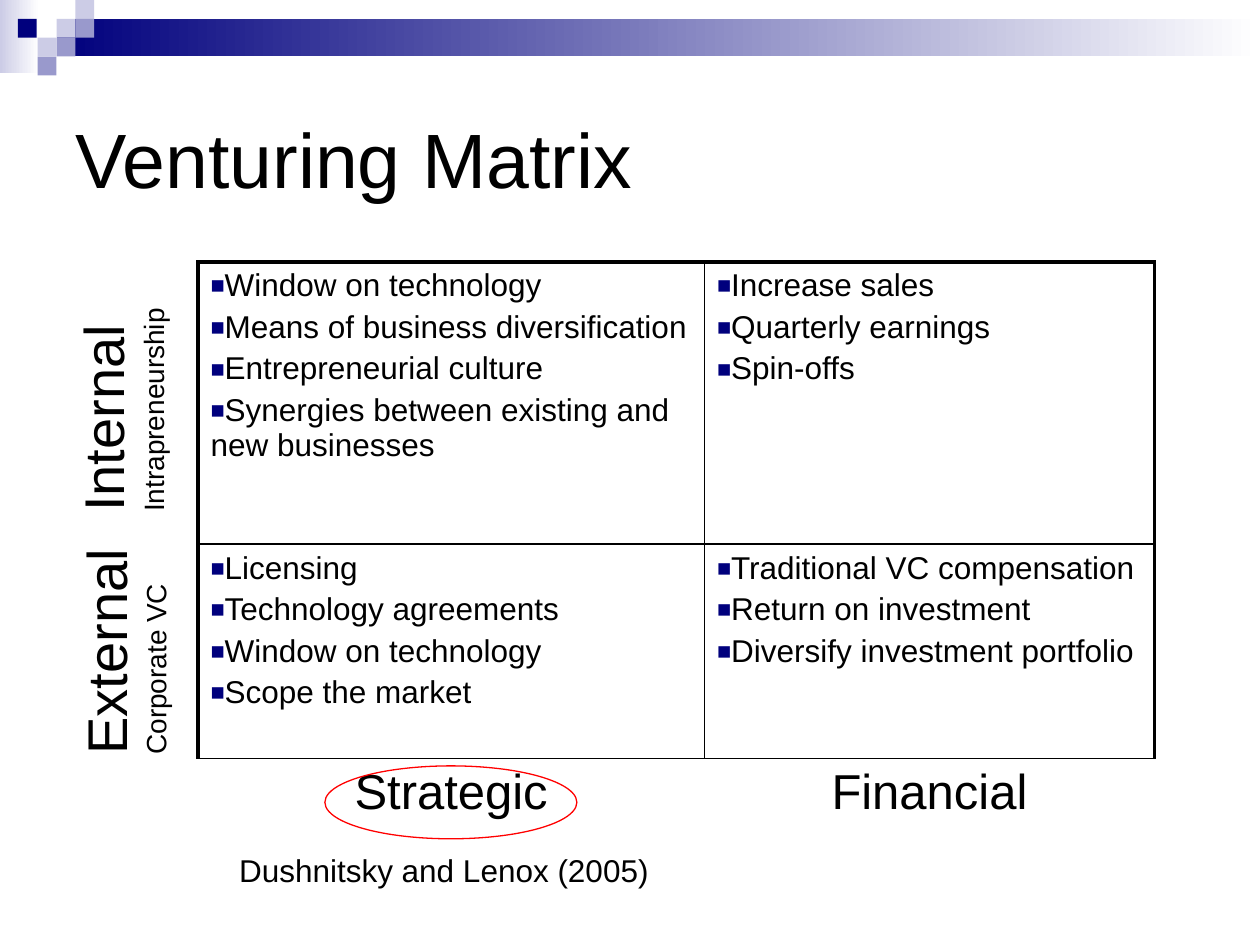
from dataclasses import dataclass

from lxml import etree
from pptx import Presentation
from pptx.dml.color import RGBColor
from pptx.enum.shapes import MSO_SHAPE as Shape
from pptx.enum.text import MSO_ANCHOR as Anchor, MSO_AUTO_SIZE as AutoSize, PP_ALIGN as Align
from pptx.oxml.ns import qn
from pptx.util import Cm, Pt


@dataclass(frozen=True)
class Theme:
    font: str = "Arial"
    text: str = "000000"
    white: str = "FFFFFF"
    navy: str = "00007D"
    mid: str = "9999CC"
    pale: str = "CCCCE6"
    accent: str = "FF0000"
    title: int = 44
    axis: int = 32
    column: int = 28
    body: int = 18
    note: int = 16
    thick: float = 2.25
    thin: float = 1


THEME = Theme()
MATRIX = [
    [
        ["Window on technology", "Means of business diversification",
         "Entrepreneurial culture",
         "Synergies between existing and new businesses"],
        ["Increase sales", "Quarterly earnings", "Spin-offs"],
    ],
    [
        ["Licensing", "Technology agreements", "Window on technology",
         "Scope the market"],
        ["Traditional VC compensation", "Return on investment",
         "Diversify investment portfolio"],
    ],
]
GOALS = ["Strategic", "Financial"]
COL_WIDTHS = [10.21, 9.07]
ROW_HEIGHTS = [5.69, 4.32, 1.83]


def rgb(color):
    return RGBColor.from_string(color)


def cm(*lengths):
    return [Cm(v) for v in lengths]


def add_run(p, text, size):
    r = p.add_run()
    r.text = text
    r.font.name = THEME.font
    r.font.size = Pt(size)
    r.font.color.rgb = rgb(THEME.text)


def write_lines(tf, lines, align=Align.LEFT, space=0):
    """Write (text, size) pairs as paragraphs; space is a share of the size."""
    for i, (text, size) in enumerate(lines):
        p = tf.paragraphs[0] if i == 0 else tf.add_paragraph()
        p.alignment = align
        p.space_before = Pt(size * space)
        add_run(p, text, size)


def add_block(s, box, *colors):
    """Add a rectangle, plain for one colour and graded for two."""
    sp = s.shapes.add_shape(Shape.RECTANGLE, *cm(*box))
    sp.shadow.inherit = False
    sp.line.fill.background()
    if len(colors) == 1:
        sp.fill.solid()
        sp.fill.fore_color.rgb = rgb(colors[0])
        return
    sp.fill.gradient()
    sp.fill.gradient_angle = 0
    for stop, color, position in zip(sp.fill.gradient_stops, colors, (0, 1)):
        stop.color.rgb = rgb(color)
        stop.position = position


def add_banner(s):
    add_block(s, (0, 0, 0.79, 1.47), THEME.pale, THEME.white)
    add_block(s, (1.14, 0.38, 24.26, 0.76), THEME.navy, THEME.white)
    side = 0.38
    squares = [(3, 1, THEME.pale), (4, 0, THEME.pale), (4, 1, THEME.mid),
               (2, 2, THEME.pale), (0.95, 1, THEME.navy), (3, 2, THEME.mid),
               (2, 3, THEME.mid)]
    for col, row, color in squares:
        add_block(s, (col * side, row * side, side, side), color)


def set_title(s, text):
    sp = s.shapes.title
    sp.left, sp.top, sp.width, sp.height = cm(1.27, 1.27, 22.86, 3.81)
    sp.text_frame.vertical_anchor = Anchor.MIDDLE
    write_lines(sp.text_frame, [(text, THEME.title)])


def add_bullet(p):
    pPr = p._p.get_or_add_pPr()
    pPr.set("marL", "0")
    pPr.set("indent", "0")
    color = etree.SubElement(pPr, qn("a:buClr"))
    etree.SubElement(color, qn("a:srgbClr"), val=THEME.navy)
    etree.SubElement(pPr, qn("a:buSzPct"), val="75000")
    etree.SubElement(pPr, qn("a:buFont"), typeface=THEME.font)
    etree.SubElement(pPr, qn("a:buChar"), char="■")


def set_borders(cell, **widths):
    """Set sides L, R, T and B in points; a side of 0 has no line."""
    tcPr = cell._tc.get_or_add_tcPr()
    for side in "LRTB":
        width = widths.get(side, 0)
        ln = etree.SubElement(tcPr, qn(f"a:ln{side}"), w=str(int(Pt(width))))
        if width:
            fill = etree.SubElement(ln, qn("a:solidFill"))
            etree.SubElement(fill, qn("a:srgbClr"), val=THEME.text)
        else:
            etree.SubElement(ln, qn("a:noFill"))


def add_matrix(s):
    box = cm(3.99, 5.28, sum(COL_WIDTHS), sum(ROW_HEIGHTS))
    table = s.shapes.add_table(len(ROW_HEIGHTS), len(COL_WIDTHS), *box).table
    table.first_row = table.horz_banding = False
    for column, width in zip(table.columns, COL_WIDTHS):
        column.width = Cm(width)
    for row, height in zip(table.rows, ROW_HEIGHTS):
        row.height = Cm(height)

    thick, thin = THEME.thick, THEME.thin
    for i, row in enumerate(MATRIX):
        for j, items in enumerate(row):
            cell = table.cell(i, j)
            write_lines(cell.text_frame, [(t, THEME.body) for t in items], space=0.2)
            for p in cell.text_frame.paragraphs:
                add_bullet(p)
            set_borders(cell, L=thin if j else thick, R=thick if j else thin,
                        T=thin if i else thick, B=thin)
    for j, goal in enumerate(GOALS):
        cell = table.cell(len(MATRIX), j)
        write_lines(cell.text_frame, [(goal, THEME.column)], Align.CENTER, 0.2)
        set_borders(cell, T=thin)
    for cell in table.iter_cells():
        cell.fill.background()


def add_text(s, box, lines, align=Align.LEFT, rotation=0, wrap=False):
    sp = s.shapes.add_textbox(*cm(*box))
    sp.rotation = rotation
    sp.text_frame.word_wrap = wrap
    sp.text_frame.auto_size = AutoSize.SHAPE_TO_FIT_TEXT
    write_lines(sp.text_frame, lines, align)


def add_axis_label(s, box, name, detail, wrap):
    add_text(s, box, [(name, THEME.axis), (detail, THEME.note)],
             rotation=270, wrap=wrap)


def add_highlight(s, box):
    sp = s.shapes.add_shape(Shape.OVAL, *cm(*box))
    sp.shadow.inherit = False
    sp.fill.background()
    sp.line.color.rgb = rgb(THEME.accent)
    sp.line.width = Pt(0.75)


def main():
    prs = Presentation()
    prs.slide_width, prs.slide_height = cm(25.4, 19.05)
    s = prs.slides.add_slide(prs.slide_layouts[5])
    add_banner(s)
    set_title(s, "Venturing Matrix")
    add_matrix(s)
    add_axis_label(s, (-0.13, 6.88, 5.08, 2.29), "Internal", "Intrapreneurship", True)
    add_axis_label(s, (0.13, 11.99, 4.65, 2.29), "External", "Corporate VC", False)
    add_highlight(s, (6.55, 15.44, 5.08, 1.47))
    add_text(s, (4.57, 17.04, 8.76, 1.02),
             [("Dushnitsky and Lenox (2005)", THEME.body)], Align.CENTER)
    prs.save("out.pptx")


if __name__ == "__main__":
    main()
